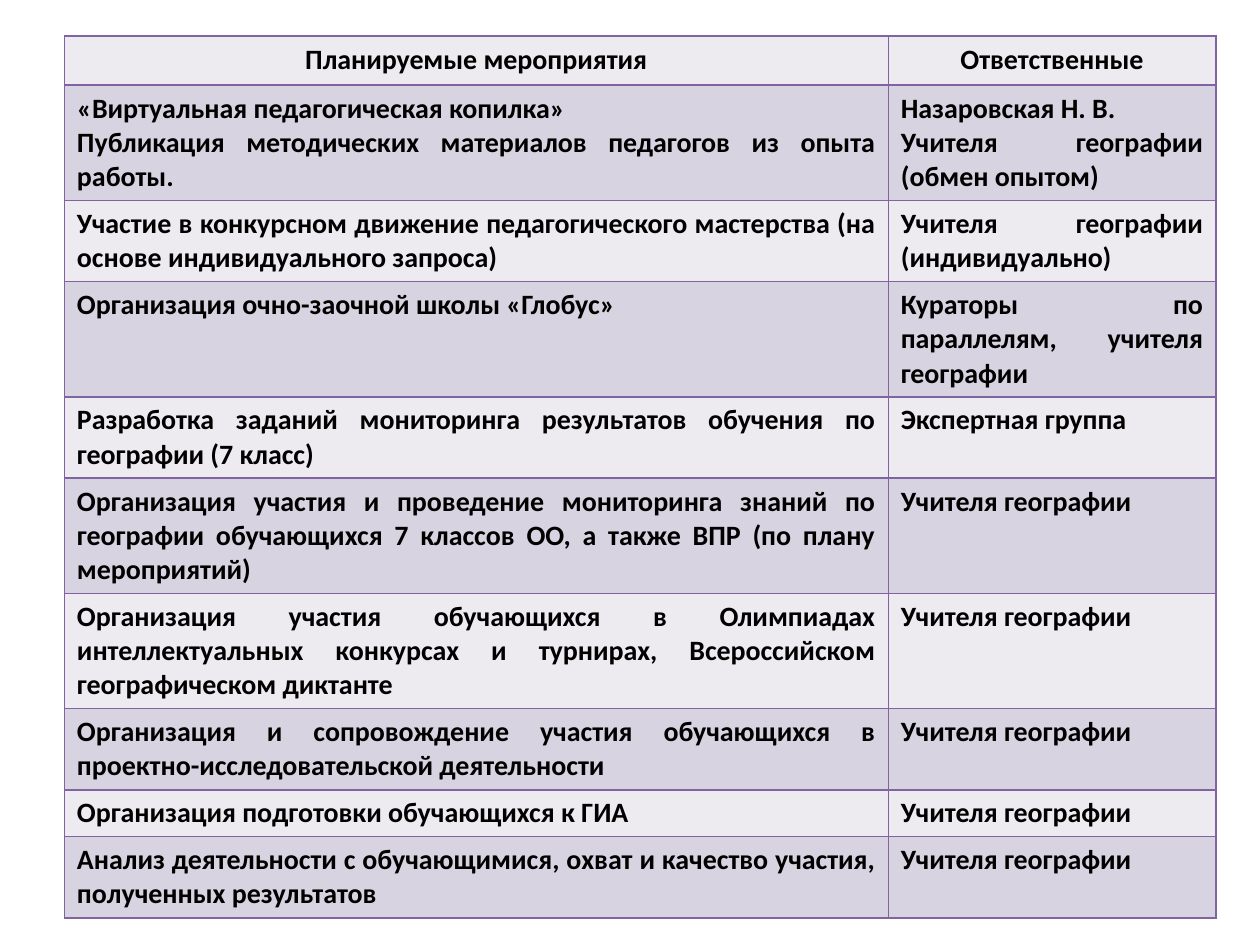
from dataclasses import dataclass

from lxml.etree import SubElement
from pptx import Presentation
from pptx.dml.color import RGBColor
from pptx.enum.text import PP_ALIGN as Align
from pptx.oxml.ns import qn
from pptx.table import Table, _Cell as Cell
from pptx.util import Pt

COLORS = {"text": "000000", "border": "8064A2", "light": "EDEAF0", "dark": "D8D3E0"}
FONT_FORMAT = {"name": "Calibri", "size": Pt(16), "bold": True}
COLUMN_WIDTHS = (Pt(470.8), Pt(187.2))
HEADER_HEIGHT = 28
LINE_HEIGHT = 19.5
CELL_PADDING = 7.2
TEACHERS = "Учителя географии"


@dataclass(frozen=True)
class Activity:
    plan: str
    responsible: str
    lines: int

    @property
    def height(self) -> float:
        return CELL_PADDING + LINE_HEIGHT * self.lines


HEADINGS = ("Планируемые мероприятия", "Ответственные")
ACTIVITIES = (
    Activity(
        "«Виртуальная педагогическая копилка»\n"
        "Публикация методических материалов педагогов из опыта работы.",
        "Назаровская Н. В.\nУчителя географии (обмен опытом)",
        3,
    ),
    Activity(
        "Участие в конкурсном движение педагогического мастерства "
        "(на основе индивидуального запроса)",
        "Учителя географии (индивидуально)",
        2,
    ),
    Activity(
        "Организация очно-заочной школы «Глобус»",
        "Кураторы по параллелям, учителя географии",
        3,
    ),
    Activity(
        "Разработка заданий мониторинга результатов обучения по географии (7 класс)",
        "Экспертная группа",
        2,
    ),
    Activity(
        "Организация участия и проведение мониторинга знаний по географии "
        "обучающихся 7 классов ОО, а также ВПР (по плану мероприятий)",
        TEACHERS,
        3,
    ),
    Activity(
        "Организация участия обучающихся в Олимпиадах интеллектуальных конкурсах "
        "и турнирах, Всероссийском географическом диктанте",
        TEACHERS,
        3,
    ),
    Activity(
        "Организация и сопровождение участия обучающихся "
        "в проектно-исследовательской деятельности",
        TEACHERS,
        2,
    ),
    Activity("Организация подготовки обучающихся к ГИА", TEACHERS, 1),
    Activity(
        "Анализ деятельности с обучающимися, охват и качество участия, "
        "полученных результатов",
        TEACHERS,
        2,
    ),
)


def draw_borders(cell: Cell) -> None:
    properties = cell._tc.get_or_add_tcPr()
    for side in ("a:lnL", "a:lnR", "a:lnT", "a:lnB"):
        border = SubElement(properties, qn(side), w=str(Pt(1)))
        fill = SubElement(border, qn("a:solidFill"))
        SubElement(fill, qn("a:srgbClr"), val=COLORS["border"])


def fill_cell(cell: Cell, text: str, align: Align, background: str) -> None:
    draw_borders(cell)
    cell.fill.solid()
    cell.fill.fore_color.rgb = RGBColor.from_string(COLORS[background])
    cell.text = text
    for paragraph in cell.text_frame.paragraphs:
        paragraph.alignment = align
        for run in paragraph.runs:
            for attribute, value in FONT_FORMAT.items():
                setattr(run.font, attribute, value)
            run.font.color.rgb = RGBColor.from_string(COLORS["text"])


def fill_row(table: Table, index: int, texts: tuple[str, str], height: float,
             align: Align) -> None:
    table.rows[index].height = Pt(height)
    background = "dark" if index % 2 else "light"
    for cell, text in zip(table.rows[index].cells, texts):
        fill_cell(cell, text, align, background)


def main() -> None:
    deck = Presentation()
    deck.slide_width, deck.slide_height = Pt(720), Pt(540)
    slide = deck.slides.add_slide(deck.slide_layouts[6])
    total_height = HEADER_HEIGHT + sum(activity.height for activity in ACTIVITIES)
    plan = slide.shapes.add_table(
        len(ACTIVITIES) + 1, len(HEADINGS),
        Pt(36.8), Pt(20.7), sum(COLUMN_WIDTHS), Pt(total_height),
    ).table
    for column, width in zip(plan.columns, COLUMN_WIDTHS):
        column.width = width
    fill_row(plan, 0, HEADINGS, HEADER_HEIGHT, Align.CENTER)
    for index, activity in enumerate(ACTIVITIES, start=1):
        texts = (activity.plan, activity.responsible)
        fill_row(plan, index, texts, activity.height, Align.JUSTIFY)
    deck.save("out.pptx")


if __name__ == "__main__":
    main()
